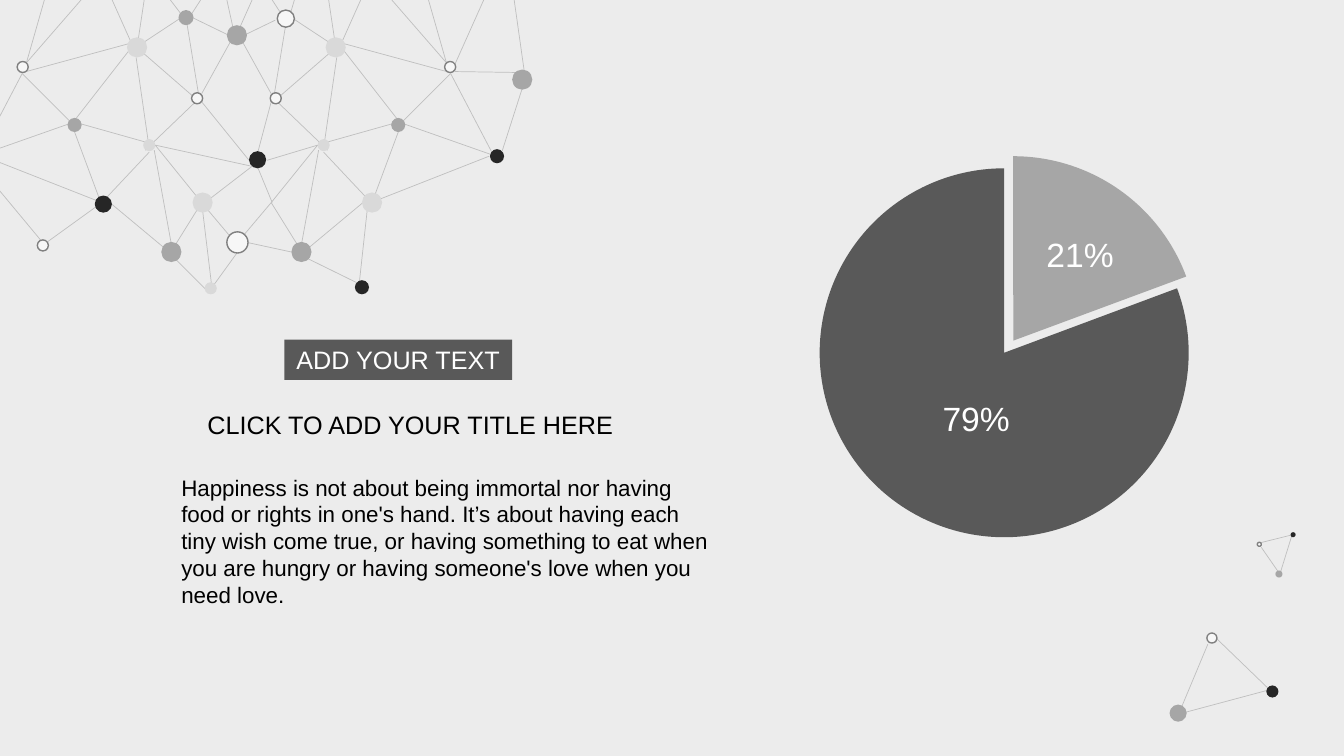
import pptx
import pptx.dml.color
import pptx.enum.shapes
import pptx.enum.text
import pptx.oxml.ns
import pptx.util
from lxml import etree
from pptx.util import Inches

SHAPE = pptx.enum.shapes.MSO_SHAPE
ALIGN = pptx.enum.text.PP_ALIGN

BLACK, WHITE = "000000", "FFFFFF"
INK, DARK, MID, PALE, HOLLOW = "262626", "595959", "A6A6A6", "D9D9D9", "F7F7F7"
RING, LINK, BACKGROUND = "808080", "BFBFBF", "ECECEC"

MIRROR_SUM = 4.69  # x on the left half plus x on the right half

# Links: x1, y1, x2, y2
MIRRORED_LINKS = [
    (1.05, -0.14, 1.3, 0.42), (0.96, -0.18, 0.23, 0.66), (0.5, -0.21, 0.26, 0.63),
    (1.29, 0.43, 0.26, 0.71), (1.92, 0.96, 1.31, 0.43), (1.37, 0.4, 1.43, 0),
    (1.99, 0, 1.88, 0.17), (1.82, 0.16, 1.35, 0.47), (1.85, 0.21, 1.98, 1),
    (-0.23, 1.59, 0.22, 0.73), (0.71, 1.22, 0.22, 0.73), (0.72, 1.22, 1.32, 0.45),
    (0.71, 1.22, -0.2, 1.54), (1.44, 1.49, 1.95, 1), (0.77, 1.22, 1.48, 1.42),
    (1.35, 0.57, 1.47, 1.4), (1.01, 2.01, 1.48, 1.51), (1, 2.01, 0.74, 1.31),
    (-0.16, 1.55, 1.01, 2.01), (1.53, 1.49, 1.71, 2.48), (1.09, 2.01, 1.69, 2.51),
    (2, 0.93, 2.31, 0.37), (1.54, 1.44, 2, 2.01), (1.72, 2.46, 2, 2.01),
    (2, 2.01, 2.27, 2.33),
]
SINGLE_LINKS = [
    (2.25, 0, 2.31, 0.27), (2.5, 0, 2.38, 0.27), (1.69, 0, 1.82, 0.17),
    (2.92, 0, 2.87, 0.17), (-0.23, 1.62, 0.41, 2.39), (1.01, 2.01, 0.47, 2.4),
    (1.54, 1.44, 2.5, 1.65), (3.15, 1.44, 2.65, 1.59), (2, 1.01, 2.47, 1.59),
    (2.69, 1.01, 2.56, 1.5), (1.92, 0.18, 2.31, 0.37), (2.73, 0.2, 2.38, 0.37),
    (2, 2.01, 2.1, 2.84), (1.74, 2.57, 2.06, 2.89), (2.09, 2.87, 2.35, 2.51),
    (4.86, -0.14, 4.48, 0.71), (4.51, 0.71, 5.18, 0.72), (4.98, 1.5, 5.23, 0.72),
    (2.7, 2.01, 2.56, 1.67), (3.65, 2.01, 3.56, 2.84), (3, 2.54, 3.57, 2.82),
    (2.89, 2.5, 2.38, 2.39), (2.02, 2.02, 2.5, 1.65), (5.08, -0.14, 5.2, 0.71),
]

# Dots: left, top, diameter, colour
MIRRORED_DOTS = [
    (0.17, 0.61, 0.11, HOLLOW), (1.42, 1.38, 0.12, PALE), (1.9, 0.92, 0.11, HOLLOW),
    (0.67, 1.17, 0.14, MID), (1.26, 0.37, 0.2, PALE), (1.6, 2.4, 0.2, MID),
]
SINGLE_DOTS = [
    (5.08, 0.69, 0.2, MID), (4.86, 1.48, 0.14, INK), (3.52, 2.78, 0.14, INK),
    (3.59, 1.91, 0.2, PALE), (2.25, 2.3, 0.21, HOLLOW), (1.77, 0.1, 0.15, MID),
    (0.37, 2.38, 0.11, HOLLOW), (2.03, 2.8, 0.12, PALE), (0.94, 1.94, 0.17, INK),
    (2.25, 0.25, 0.2, MID), (2.75, 0.1, 0.17, HOLLOW), (2.47, 1.5, 0.17, INK),
    (1.91, 1.91, 0.2, PALE),
]

# Small triangles in the lower right corner
TRIANGLES = [
    ([(11.7, 7.06, 11.98, 6.39), (11.67, 7.09, 12.64, 6.83), (12.61, 6.86, 12.03, 6.3)],
     [(12.56, 6.8, 0.12, INK), (11.6, 6.99, 0.17, MID), (11.97, 6.28, 0.1, HOLLOW)]),
    ([(12.69, 5.69, 12.51, 5.43), (12.69, 5.71, 12.82, 5.29), (12.8, 5.31, 12.48, 5.39)],
     [(12.8, 5.28, 0.05, INK), (12.65, 5.66, 0.07, MID), (12.47, 5.38, 0.04, HOLLOW)]),
]

QUOTE = ("Happiness is not about being immortal nor having food or rights in one's hand. "
         "It’s about having each tiny wish come true, or having something to eat when you "
         "are hungry or having someone's love when you need love.")


def rgb(value):
    return pptx.dml.color.RGBColor.from_string(value)


def add_link(shapes, x1, y1, x2, y2):
    line = shapes.add_connector(pptx.enum.shapes.MSO_CONNECTOR.STRAIGHT,
                                Inches(x1), Inches(y1), Inches(x2), Inches(y2))
    line.line.color.rgb = rgb(LINK)
    line.line.width = pptx.util.Pt(0.5)
    etree.SubElement(line._element.spPr, pptx.oxml.ns.qn("a:effectLst"))


def add_filled(shapes, kind, left, top, width, height, color):
    sp = shapes.add_shape(kind, Inches(left), Inches(top), Inches(width), Inches(height))
    sp.shadow.inherit = False
    sp.fill.solid()
    sp.fill.fore_color.rgb = rgb(color)
    sp.line.fill.background()
    return sp


def add_dot(shapes, left, top, size, color):
    sp = add_filled(shapes, SHAPE.OVAL, left, top, size, size, color)
    if color == HOLLOW:
        sp.line.color.rgb = rgb(RING)
        sp.line.width = pptx.util.Pt(1)


def add_network(shapes, links, dots):
    for link in links:
        add_link(shapes, *link)
    for dot in dots:
        add_dot(shapes, *dot)


def add_slice(shapes, left, top, start, end, color):
    """Draw a pie slice running clockwise between two angles in degrees."""
    sp = add_filled(shapes, SHAPE.PIE, left, top, 3.66, 3.66, color)
    for i, angle in enumerate((start, end)):
        sp.adjustments[i] = angle * 60000 / 100000


def write(sp, text, size, color, align=ALIGN.LEFT):
    tf = sp.text_frame
    tf.word_wrap = True
    tf.auto_size = pptx.enum.text.MSO_AUTO_SIZE.SHAPE_TO_FIT_TEXT
    p = tf.paragraphs[0]
    p.alignment = align
    r = p.add_run()
    r.text = text
    r.font.name = "Arial"
    r.font.size = pptx.util.Pt(size)
    r.font.color.rgb = rgb(color)


def add_text(shapes, left, top, width, height, text, size, color):
    sp = shapes.add_textbox(Inches(left), Inches(top), Inches(width), Inches(height))
    write(sp, text, size, color)


def main():
    prs = pptx.Presentation()
    prs.slide_width, prs.slide_height = Inches(13.33), Inches(7.5)
    s = prs.slides.add_slide(prs.slide_layouts[6])
    s.background.fill.solid()
    s.background.fill.fore_color.rgb = rgb(BACKGROUND)
    shapes = s.shapes

    # Pie with one slice pulled out
    add_slice(shapes, 8.13, 1.67, 339.55, 270, DARK)
    add_slice(shapes, 8.22, 1.55, 270, 339.66, MID)
    add_text(shapes, 10.28, 2.27, 1.01, 0.5, "21%", 24, WHITE)
    add_text(shapes, 9.25, 3.9, 0.93, 0.5, "79%", 24, WHITE)

    # Network at the top left, mostly symmetrical
    right_links = [(MIRROR_SUM - x1, y1, MIRROR_SUM - x2, y2)
                   for x1, y1, x2, y2 in MIRRORED_LINKS]
    right_dots = [(MIRROR_SUM - left - size, top, size, color)
                  for left, top, size, color in MIRRORED_DOTS]
    add_network(shapes, MIRRORED_LINKS + right_links + SINGLE_LINKS,
                MIRRORED_DOTS + right_dots + SINGLE_DOTS)

    # Corner triangles
    for links, dots in TRIANGLES:
        add_network(shapes.add_group_shape().shapes, links, dots)

    # Label, title and body text
    label = add_filled(shapes, SHAPE.RECTANGLE, 2.82, 3.37, 2.26, 0.4, DARK)
    write(label, "ADD YOUR TEXT", 18, WHITE, ALIGN.CENTER)
    add_text(shapes, 1.96, 4.01, 4.4, 0.4, "CLICK TO ADD YOUR TITLE HERE", 18, BLACK)
    add_text(shapes, 1.7, 4.65, 5.43, 1.43, QUOTE, 16, BLACK)

    prs.save("out.pptx")


if __name__ == "__main__":
    main()
